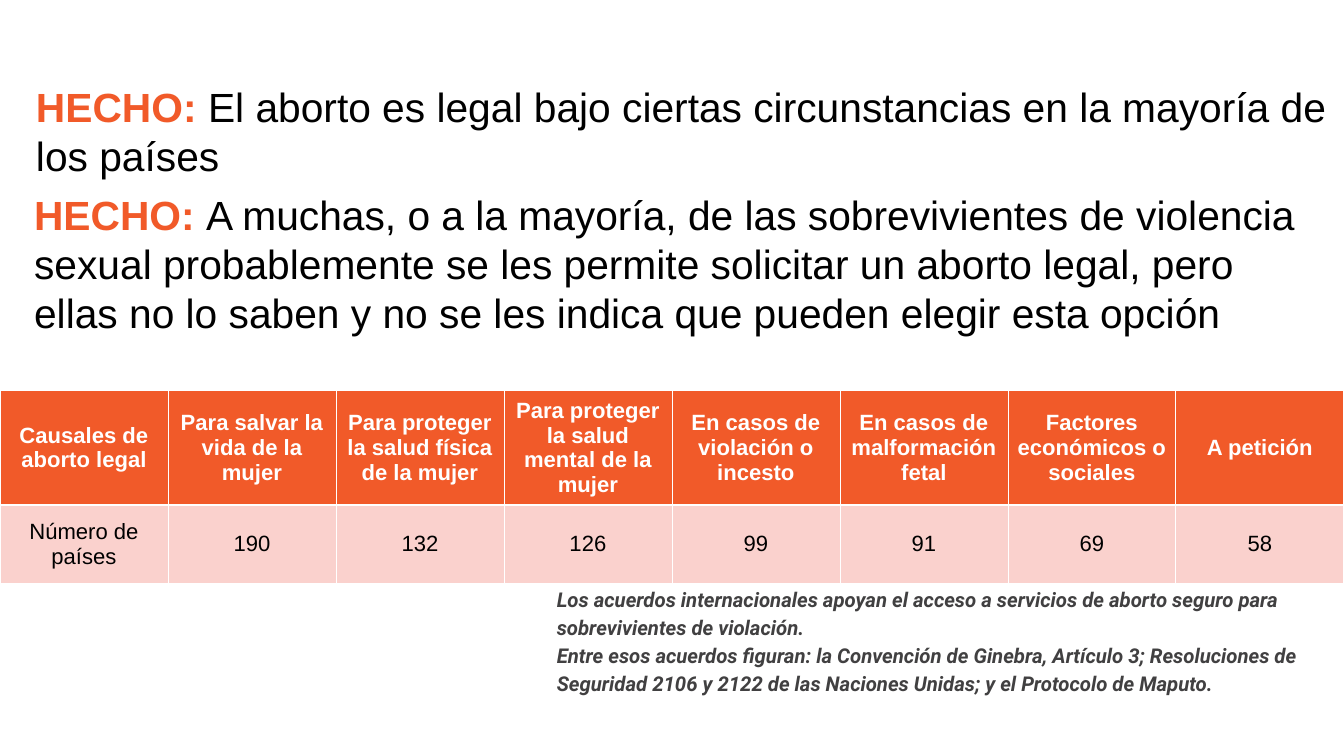
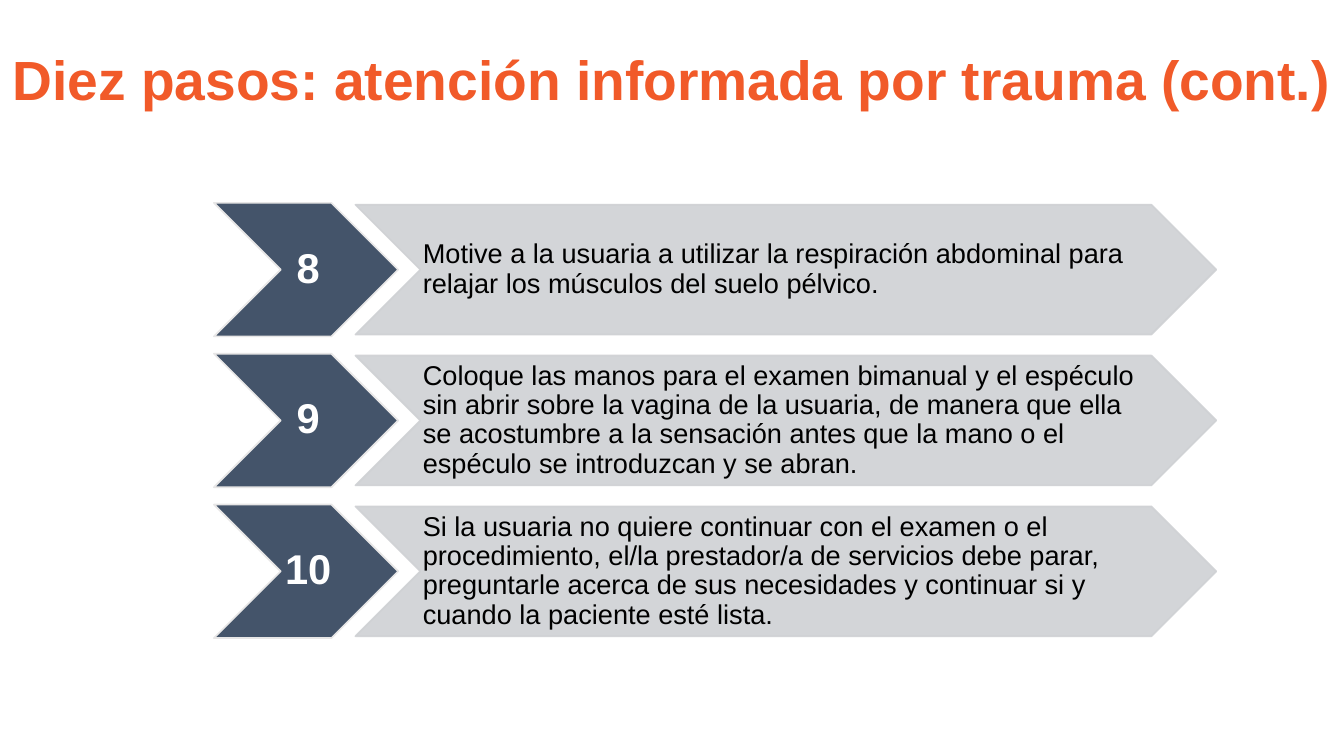
import dataclasses

import lxml.etree
import pptx
import pptx.dml.color
import pptx.enum.shapes
import pptx.enum.text
import pptx.oxml.ns
import pptx.util

SLIDE_WIDTH = 21.99
SLIDE_HEIGHT = 12.37
GRID = 100

ORANGE = "F15A29"
PINK = "FAD1CD"
NAVY = "44546A"
SILVER = "CFD1D4"
PALE = "E7E6E6"
CHARCOAL = "414041"
WHITE = "FFFFFF"
BLACK = "000000"

CENTER = pptx.enum.text.PP_ALIGN.CENTER
LEFT = pptx.enum.text.PP_ALIGN.LEFT
MIDDLE = pptx.enum.text.MSO_ANCHOR.MIDDLE

FACTS = [
    "El aborto es legal bajo ciertas circunstancias en la mayoría de los países",
    "A muchas, o a la mayoría, de las sobrevivientes de violencia sexual probablemente "
    "se les permite solicitar un aborto legal, pero ellas no lo saben y no se les indica "
    "que pueden elegir esta opción",
]
GROUNDS = [
    ("Causales de aborto legal", "Número de países"),
    ("Para salvar la vida de la mujer", "190"),
    ("Para proteger la salud física de la mujer", "132"),
    ("Para proteger la salud mental de la mujer", "126"),
    ("En casos de violación o incesto", "99"),
    ("En casos de malformación fetal", "91"),
    ("Factores económicos o sociales", "69"),
    ("A petición", "58"),
]
AGREEMENTS = [
    "Los acuerdos internacionales apoyan el acceso a servicios de aborto seguro para "
    "sobrevivientes de violación.",
    "Entre esos acuerdos figuran: la Convención de Ginebra, Artículo 3; Resoluciones de "
    "Seguridad 2106 y 2122 de las Naciones Unidas; y el Protocolo de Maputo.",
]
STEPS_TITLE = "Diez pasos: atención informada por trauma (cont.)"
FIRST_STEP = 8
STEPS = [
    "Motive a la usuaria a utilizar la respiración abdominal para relajar los músculos "
    "del suelo pélvico.",
    "Coloque las manos para el examen bimanual y el espéculo sin abrir sobre la vagina "
    "de la usuaria, de manera que ella se acostumbre a la sensación antes que la mano o "
    "el espéculo se introduzcan y se abran.",
    "Si la usuaria no quiere continuar con el examen o el procedimiento, el/la "
    "prestador/a de servicios debe parar, preguntarle acerca de sus necesidades y "
    "continuar si y cuando la paciente esté lista.",
]


@dataclasses.dataclass
class Box:
    left: float
    top: float
    width: float
    height: float

    def place(self):
        return [pptx.util.Inches(value) for value in dataclasses.astuple(self)]


def grid_box(column, row, columns, rows):
    across, down = SLIDE_WIDTH / GRID, SLIDE_HEIGHT / GRID
    return Box(column * across, row * down, columns * across, rows * down)


def color(value):
    return pptx.dml.color.RGBColor.from_string(value)


def paint(fill, value, opacity=100):
    fill.solid()
    fill.fore_color.rgb = color(value)
    return opacity


def add_span(para, text, size, value, bold=False, italic=False, font="Arial"):
    span = para.add_run()
    span.text = text
    span.font.name = font
    span.font.size = pptx.util.Pt(size)
    span.font.bold = bold
    span.font.italic = italic
    span.font.color.rgb = color(value)


def set_margins(target, left, top, right, bottom):
    target.margin_left = pptx.util.Inches(left)
    target.margin_top = pptx.util.Inches(top)
    target.margin_right = pptx.util.Inches(right)
    target.margin_bottom = pptx.util.Inches(bottom)


def add_text(page, box, margins, align=LEFT):
    frame = page.shapes.add_textbox(*box.place()).text_frame
    frame.word_wrap = True
    set_margins(frame, *margins)
    para = frame.paragraphs[0]
    para.alignment = align
    return para


def add_fact(page, box, text, inset):
    para = add_text(page, box, inset)
    add_span(para, "HECHO: ", 48, ORANGE, bold=True)
    add_span(para, text, 48, BLACK)


def add_agreements(page, box):
    para = add_text(page, box, (0, 0, 0, 0))
    para.line_spacing = 1.15
    for index, sentence in enumerate(AGREEMENTS):
        if index:
            para.add_line_break()
        add_span(para, sentence, 24, CHARCOAL, bold=True, italic=True, font="Roboto")


def set_borders(cell, widths):
    properties = cell._tc.get_or_add_tcPr()
    for side, width in widths.items():
        line = lxml.etree.SubElement(properties, pptx.oxml.ns.qn("a:ln" + side))
        line.set("w", str(pptx.util.Pt(width)))
        fill = lxml.etree.SubElement(line, pptx.oxml.ns.qn("a:solidFill"))
        lxml.etree.SubElement(fill, pptx.oxml.ns.qn("a:srgbClr")).set("val", WHITE)


def fill_cell(cell, text, background, value, bold, widths):
    set_borders(cell, widths)
    paint(cell.fill, background)
    set_margins(cell, 0.15, 0.07, 0.15, 0.07)
    cell.vertical_anchor = MIDDLE
    para = cell.text_frame.paragraphs[0]
    para.alignment = CENTER
    add_span(para, text, 26, value, bold=bold)


def add_grounds_table(page, box):
    table = page.shapes.add_table(2, len(GROUNDS), *box.place()).table
    table.first_row = False
    table.horz_banding = False
    for row, share in zip(table.rows, (0.59, 0.41)):
        row.height = pptx.util.Inches(box.height * share)
    for index, (ground, countries) in enumerate(GROUNDS):
        table.columns[index].width = pptx.util.Inches(box.width / len(GROUNDS))
        fill_cell(table.cell(0, index), ground, ORANGE, WHITE, True,
                  {"L": 1, "R": 1, "T": 1, "B": 3})
        fill_cell(table.cell(1, index), countries, PINK, BLACK, False,
                  {"L": 1, "R": 1, "T": 3, "B": 1})


def add_chevron(page, box, background, outline, opacity, margins):
    shape = page.shapes.add_shape(pptx.enum.shapes.MSO_SHAPE.CHEVRON, *box.place())
    shape.shadow.inherit = False
    paint(shape.fill, background)
    paint(shape.line.fill, outline)
    shape.line.width = pptx.util.Pt(2)
    if opacity < 100:
        for tint in shape._element.spPr.iter(pptx.oxml.ns.qn("a:srgbClr")):
            alpha = lxml.etree.SubElement(tint, pptx.oxml.ns.qn("a:alpha"))
            alpha.set("val", str(opacity * 1000))
    frame = shape.text_frame
    frame.vertical_anchor = MIDDLE
    set_margins(frame, *margins)
    para = frame.paragraphs[0]
    para.line_spacing = 0.9
    return frame, para


def add_step(page, box, number, text):
    number_box = Box(box.left, box.top, box.height * 1.38, box.height)
    frame, para = add_chevron(page, number_box, NAVY, PALE, 100, (0.07, 0.03, 0, 0.03))
    frame.word_wrap = False
    para.alignment = CENTER
    add_span(para, str(number), 49, WHITE, bold=True)

    offset, inset = box.height * 1.06, 0.03
    text_box = Box(box.left + offset, box.top + inset,
                   box.width - offset, box.height - 2 * inset)
    frame, para = add_chevron(page, text_box, SILVER, SILVER, 90, (0.04, 0.02, 0, 0.02))
    frame.word_wrap = True
    para.alignment = LEFT
    add_span(para, text, 32, BLACK)


def add_steps(page, box):
    gap_share = 0.13
    height = box.height / (len(STEPS) + (len(STEPS) - 1) * gap_share)
    for index, text in enumerate(STEPS):
        top = box.top + index * height * (1 + gap_share)
        add_step(page, Box(box.left, top, box.width, height), FIRST_STEP + index, text)


def add_title(page, box, text):
    para = add_text(page, box, (0.1, 0.1, 0.1, 0.1), CENTER)
    add_span(para, text, 65, ORANGE, bold=True)


def build_facts_page(page):
    add_fact(page, grid_box(2.23, 10.02, 97.09, 11.8), FACTS[0], (0.1, 0.1, 0.1, 0.1))
    add_fact(page, grid_box(2.09, 24.74, 95.63, 20.37), FACTS[1], (0.1, 0.05, 0.1, 0.05))
    add_grounds_table(page, grid_box(0, 51.66, 100, 25.38))
    add_agreements(page, grid_box(41.43, 77.2, 57.16, 19.81))


def build_steps_page(page):
    add_title(page, grid_box(0, 5.17, 100, 9.78), STEPS_TITLE)
    add_steps(page, grid_box(15.92, 26.84, 74.58, 57.56))


def main():
    deck = pptx.Presentation()
    deck.slide_width = pptx.util.Inches(SLIDE_WIDTH)
    deck.slide_height = pptx.util.Inches(SLIDE_HEIGHT)
    for build in (build_facts_page, build_steps_page):
        build(deck.slides.add_slide(deck.slide_layouts[6]))
    deck.save("out.pptx")


if __name__ == "__main__":
    main()
